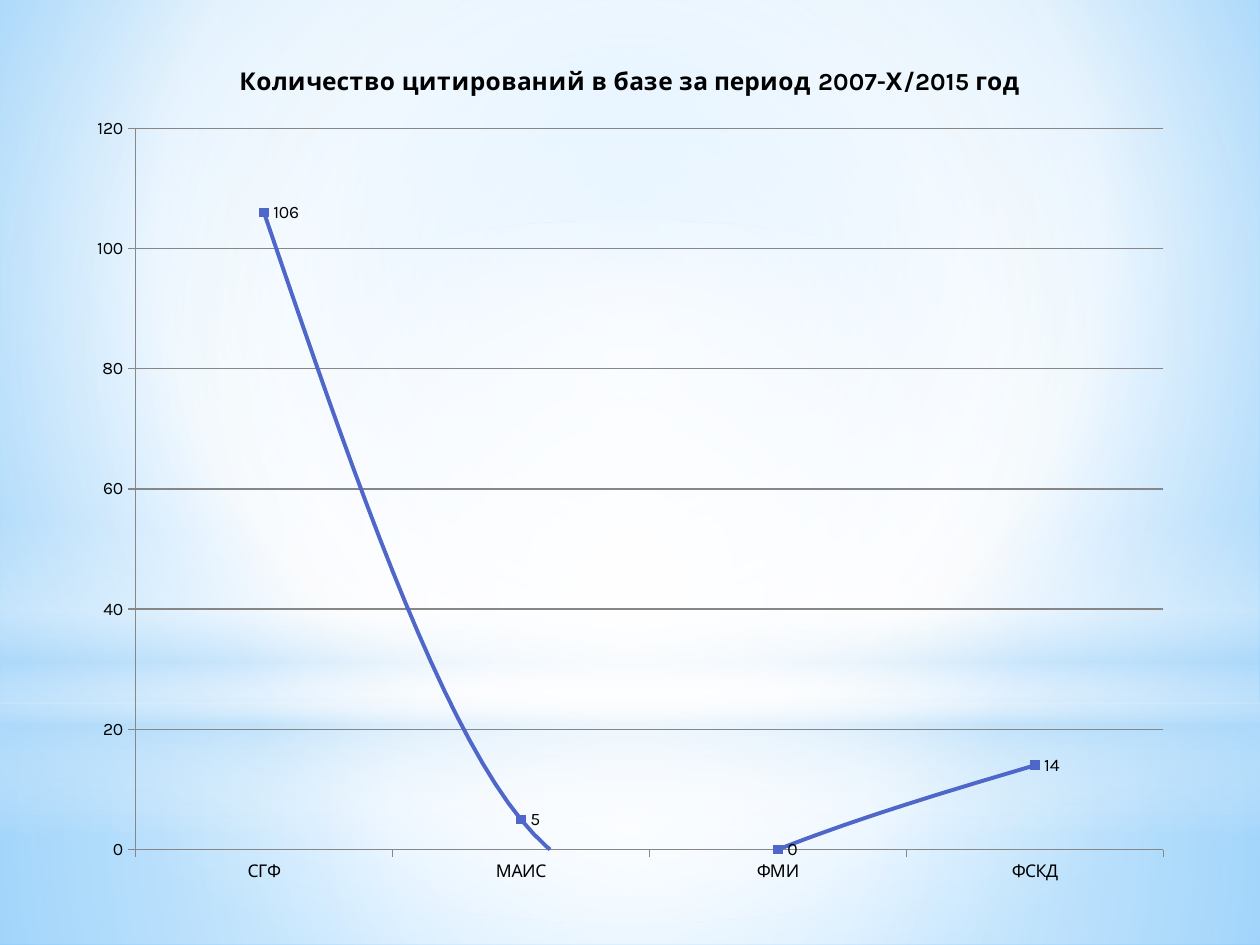
from lxml import etree
from pptx import Presentation
from pptx.chart.data import CategoryChartData
from pptx.dml.color import RGBColor
from pptx.enum.chart import XL_CHART_TYPE, XL_LABEL_POSITION, XL_MARKER_STYLE, XL_TICK_MARK
from pptx.enum.shapes import MSO_SHAPE
from pptx.oxml import parse_xml
from pptx.oxml.ns import qn
from pptx.util import Inches, Pt

LINE_MARKERS = XL_CHART_TYPE.LINE_MARKERS
RIGHT = XL_LABEL_POSITION.RIGHT
SQUARE = XL_MARKER_STYLE.SQUARE
OUTSIDE = XL_TICK_MARK.OUTSIDE
RECTANGLE, ELLIPSE = MSO_SHAPE.RECTANGLE, MSO_SHAPE.OVAL
DRAWING = "http://schemas.openxmlformats.org/drawingml/2006/main"
CHART = "http://schemas.openxmlformats.org/drawingml/2006/chart"
CENTRE = (50, 50, 50, 50)


def color(value):
    return RGBColor.from_string(value)


def write_text(frame, text, *, size, name, fill, bold=False):
    run = frame.paragraphs[0].add_run()
    run.text = text
    run.font.size = Pt(size)
    run.font.name = name
    run.font.bold = bold
    run.font.color.rgb = color(fill)


def replace_with_gradient(solid_fill, stops, focus=None, angle=90):
    """Stops are (position, colour, opacity) in percent; a focus makes it circular."""
    gradient = parse_xml(f'<a:gradFill xmlns:a="{DRAWING}" rotWithShape="1"/>')
    stop_list = etree.SubElement(gradient, qn("a:gsLst"))
    for position, value, opacity in stops:
        stop = etree.SubElement(stop_list, qn("a:gs"), pos=str(position * 1000))
        stop_color = etree.SubElement(stop, qn("a:srgbClr"), val=value)
        etree.SubElement(stop_color, qn("a:alpha"), val=str(opacity * 1000))
    if focus:
        circle = etree.SubElement(gradient, qn("a:path"))
        circle.set("path", "circle")
        sides = {side: str(share * 1000) for side, share in zip("ltrb", focus)}
        etree.SubElement(circle, qn("a:fillToRect"), **sides)
    else:
        etree.SubElement(gradient, qn("a:lin"), ang=str(angle * 60000), scaled="0")
    solid_fill.getparent().replace(solid_fill, gradient)


class SlideBuilder:
    font, ink, axis_color, accent = "Karla", "000000", "878787", "4E67C8"

    def __init__(self, width, height):
        self.presentation = Presentation()
        self.presentation.slide_width = self.width = Inches(width)
        self.presentation.slide_height = self.height = Inches(height)
        self.slide = self.presentation.slides.add_slide(self.presentation.slide_layouts[6])

    def box(self, left, top, width, height):
        """Turn shares of the slide into lengths."""
        return (int(left * self.width), int(top * self.height),
                int(width * self.width), int(height * self.height))

    def background(self, stops, focus):
        self.slide.background.fill.solid()
        solid_fill = self.slide.element.xpath("./p:cSld/p:bg//a:solidFill")[0]
        replace_with_gradient(solid_fill, stops, focus)

    def glow(self, kind, area, stops, focus=None):
        shape = self.slide.shapes.add_shape(kind, *self.box(*area))
        shape.shadow.inherit = False
        shape.line.fill.background()
        shape.fill.solid()
        replace_with_gradient(shape.element.xpath("./p:spPr/a:solidFill")[0], stops, focus)

    def line_chart(self, area, plot_area, title, values):
        data = CategoryChartData()
        data.categories = list(values)
        data.add_series("Series 1", list(values.values()))
        chart = self.slide.shapes.add_chart(LINE_MARKERS, *self.box(*area), data).chart
        chart.has_legend = False
        chart.font.size = Pt(10)
        chart.font.name = self.font
        chart.font.color.rgb = color(self.ink)
        chart.has_title = True
        write_text(chart.chart_title.text_frame, title, size=14, name=self.font,
                   fill=self.ink, bold=True)
        chart.chart_title.include_in_layout = False
        self.style_axes(chart)
        self.style_series(chart.plots[0])
        self.place_plot(chart, plot_area)

    def style_axes(self, chart):
        value_axis = chart.value_axis
        value_axis.minimum_scale, value_axis.maximum_scale = 0, 120
        value_axis.major_unit = 20
        value_axis.has_major_gridlines = True
        for axis in (chart.category_axis, value_axis):
            axis.major_tick_mark = OUTSIDE
        for ruled in (chart.category_axis, value_axis, value_axis.major_gridlines):
            ruled.format.line.color.rgb = color(self.axis_color)
            ruled.format.line.width = Pt(0.75)

    def style_series(self, plot):
        plot.vary_by_categories = False
        series = plot.series[0]
        series.smooth = True
        series.format.line.color.rgb = color(self.accent)
        series.format.line.width = Pt(2.25)
        series.marker.style = SQUARE
        series.marker.size = 5
        series.marker.format.fill.solid()
        series.marker.format.fill.fore_color.rgb = color(self.accent)
        series.marker.format.line.color.rgb = color(self.accent)
        series.data_labels.show_value = True
        series.data_labels.position = RIGHT

    def place_plot(self, chart, plot_area):
        """Fix the inner plot area, given as shares of the chart."""
        plot_element = chart.element.xpath(".//c:plotArea")[0]
        for layout in plot_element.findall(qn("c:layout")):
            plot_element.remove(layout)
        layout = parse_xml(f'<c:layout xmlns:c="{CHART}"/>')
        manual = etree.SubElement(layout, qn("c:manualLayout"))
        settings = {"layoutTarget": "inner", "xMode": "edge", "yMode": "edge",
                    **dict(zip("xywh", plot_area))}
        for tag, value in settings.items():
            etree.SubElement(manual, qn(f"c:{tag}"), val=str(value))
        plot_element.insert(0, layout)

    def save(self):
        self.presentation.save("out.pptx")


def main():
    builder = SlideBuilder(10, 7.5)
    white, pale = "FFFFFF", "B4DCFA"
    horizon = 0.744
    builder.background([(0, "9ED5FF", 100), (60, white, 100), (100, "5BB9FF", 100)],
                       focus=(20, 10, 20, 60))
    builder.glow(RECTANGLE, (0, horizon, 1, 1 - horizon),
                 [(0, white, 91), (37, white, 76), (100, pale, 79)], CENTRE)
    builder.glow(RECTANGLE, (0, 0, 1, horizon),
                 [(0, white, 89), (48, white, 62), (100, pale, 79)], CENTRE)
    builder.glow(RECTANGLE, (0, 0.55, 1, 0.333),
                 [(0, white, 0), (29, white, 30), (45, pale, 40),
                  (55, white, 26), (65, pale, 60), (100, white, 0)])
    builder.glow(ELLIPSE, (0, 0.233, 1, horizon), [(0, white, 100), (56, white, 0)], CENTRE)
    builder.line_chart((0.059, 0.039, 0.882, 0.913), (0.055, 0.106, 0.925, 0.836),
                       "Количество цитирований в базе за период 2007-Х/2015 год",
                       {"СГФ": 106, "МАИС": 5, "ФМИ": 0, "ФСКД": 14})
    builder.save()


if __name__ == "__main__":
    main()
